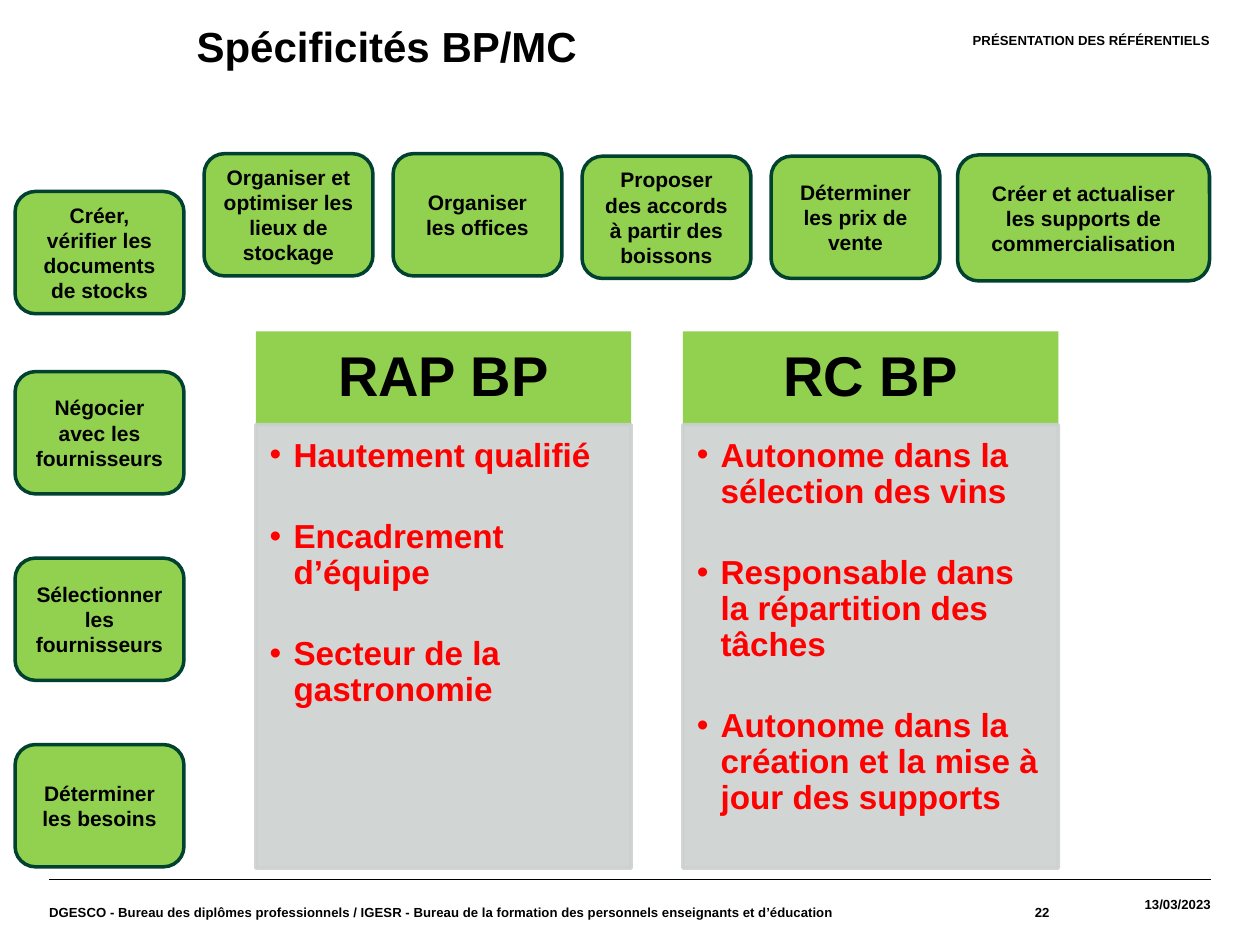
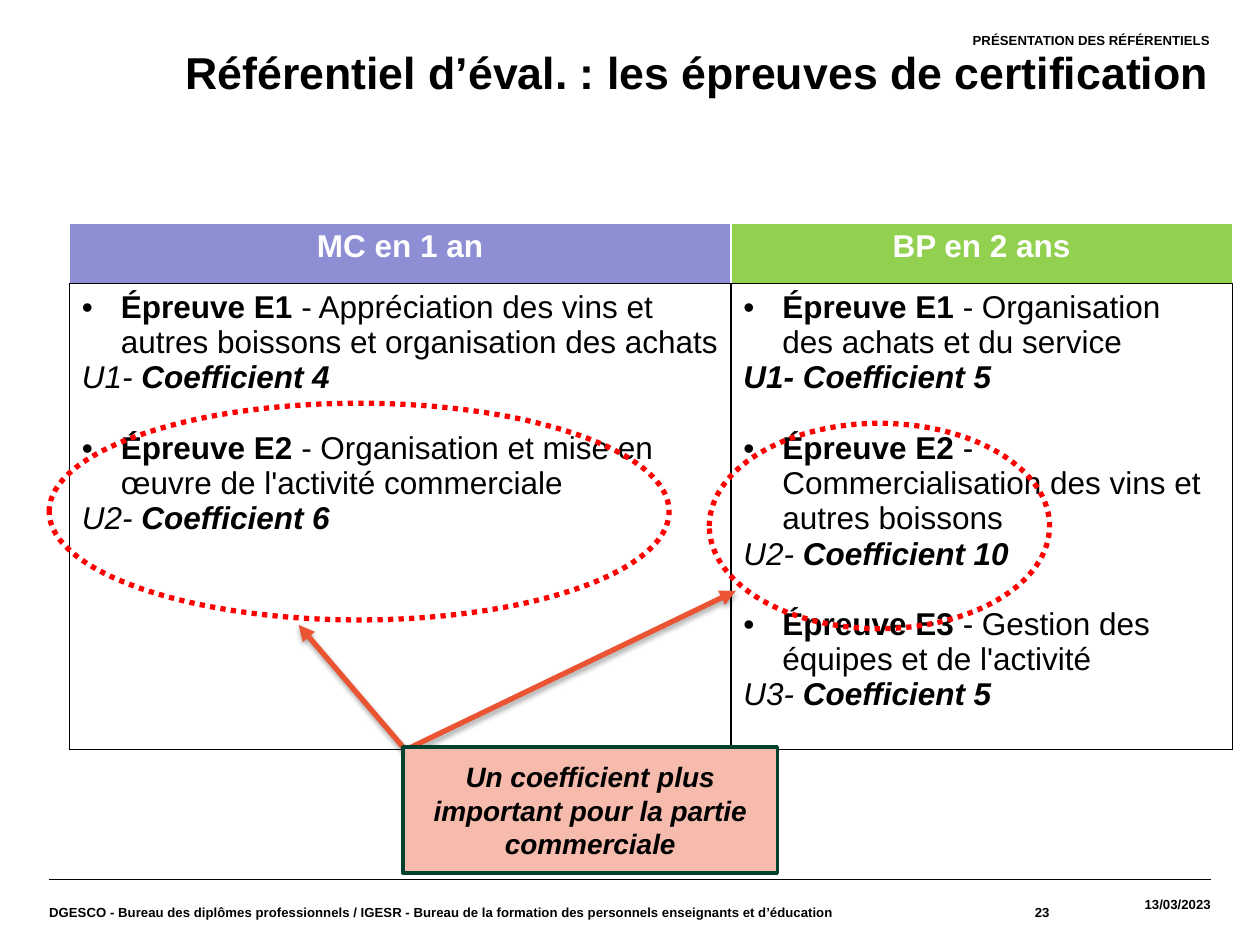
from typing import NamedTuple, Optional

from lxml.etree import SubElement
from pptx import Presentation
from pptx.dml.color import RGBColor
from pptx.enum.dml import MSO_LINE
from pptx.enum.shapes import MSO_CONNECTOR, MSO_SHAPE
from pptx.enum.text import MSO_ANCHOR, MSO_AUTO_SIZE, PP_ALIGN
from pptx.oxml.ns import qn
from pptx.util import Inches, Pt

FONT = "Arial"
BLACK, WHITE, RED = "000000", "FFFFFF", "FF0000"
GREEN, DARK_GREEN, LILAC = "92D050", "004130", "8E8ED5"
GREY, SALMON, ORANGE = "CCD1CF", "F7BBAD", "EA5433"
SECTION = "PRÉSENTATION DES RÉFÉRENTIELS"
DATE = "13/03/2023"
AUTHOR = (
    "DGESCO - Bureau des diplômes professionnels / IGESR - "
    "Bureau de la formation des personnels enseignants et d’éducation"
)
DEFAULT_INSETS = (0.1, 0.05, 0.1, 0.05)
NO_INSETS = (0, 0, 0, 0)


class Box(NamedTuple):
    left: float
    top: float
    width: float
    height: float

    def lengths(self):
        return [Inches(value) for value in self]


class Style(NamedTuple):
    size: float
    color: str = BLACK
    bold: bool = True
    italic: bool = False


class Panel(NamedTuple):
    heading: str
    points: list[str]


class Exam(NamedTuple):
    name: str
    subject: str
    unit: str
    coefficient: str
    italic_unit_only: bool = True


SMALL = Style(7.5)
SKILL_SIZE = (1.34, 0.97)
SIDE_SKILLS = [
    (1.52, "Créer, vérifier les documents de stocks"),
    (2.95, "Négocier avec les fournisseurs"),
    (4.43, "Sélectionner les fournisseurs"),
    (5.91, "Déterminer les besoins"),
]
TOP_SKILLS = [
    (1.22, "Organiser et optimiser les lieux de stockage"),
    (1.22, "Organiser les offices"),
    (1.24, "Proposer\ndes accords à partir des boissons"),
    (1.24, "Déterminer les prix de vente"),
]
PANELS = [
    Panel("RAP BP", ["Hautement qualifié", "Encadrement d’équipe",
                     "Secteur de la gastronomie"]),
    Panel("RC BP", ["Autonome dans la sélection des vins",
                    "Responsable dans la répartition des tâches",
                    "Autonome dans la création et la mise à jour des supports"]),
]
MC_EXAMS = [
    Exam("Épreuve E1 ",
         "- Appréciation des vins et autres boissons et organisation des achats",
         "U1- ", "Coefficient 4"),
    Exam("Épreuve E2 ", "- Organisation et mise en œuvre de l'activité commerciale",
         "U2- ", "Coefficient 6"),
]
BP_EXAMS = [
    Exam("Épreuve E1 ", "- Organisation des achats et du service",
         "U1- ", "Coefficient 5", italic_unit_only=False),
    Exam("Épreuve E2 ", "- Commercialisation des vins et autres boissons",
         "U2- ", "Coefficient 10"),
    Exam("Épreuve E3 ", "- Gestion des équipes et de l'activité",
         "U3- ", "Coefficient 5"),
]


def rgb(color: str) -> RGBColor:
    return RGBColor.from_string(color)


def add_run(paragraph, text: str, style: Style) -> None:
    """Add text in one style; a newline becomes a line break."""
    for index, line in enumerate(text.split("\n")):
        if index:
            paragraph.add_line_break()
        run = paragraph.add_run()
        run.text = line
        font = run.font
        font.name, font.size = FONT, Pt(style.size)
        font.bold, font.italic = style.bold, style.italic
        font.color.rgb = rgb(style.color)


def next_paragraph(frame, first: bool):
    return frame.paragraphs[0] if first else frame.add_paragraph()


def set_bullet(paragraph, indent: float, character: Optional[str] = "•") -> None:
    """Set a hanging bullet, or remove the inherited one when character is None."""
    properties = paragraph._p.get_or_add_pPr()
    properties.set("marL", str(Inches(indent)))
    properties.set("indent", str(-Inches(indent)))
    if character:
        SubElement(properties, qn("a:buFont"), typeface=FONT)
        SubElement(properties, qn("a:buChar"), char=character)
    else:
        SubElement(properties, qn("a:buNone"))


def prepare_frame(shape, anchor=MSO_ANCHOR.TOP, insets=DEFAULT_INSETS):
    frame = shape.text_frame
    frame.word_wrap, frame.auto_size = True, MSO_AUTO_SIZE.NONE
    frame.vertical_anchor = anchor
    frame.margin_left, frame.margin_top, frame.margin_right, frame.margin_bottom = (
        Inches(inset) for inset in insets)
    return frame


def write_line(shape, text: str, style: Style, align=PP_ALIGN.CENTER,
               anchor=MSO_ANCHOR.MIDDLE, insets=DEFAULT_INSETS):
    paragraph = prepare_frame(shape, anchor, insets).paragraphs[0]
    paragraph.alignment = align
    add_run(paragraph, text, style)
    return paragraph


def place(shape, box: Box) -> None:
    shape.left, shape.top, shape.width, shape.height = box.lengths()


def add_box(slide, preset, box: Box, fill: Optional[str] = None,
            line: Optional[str] = None, line_width: float = 2):
    shape = slide.shapes.add_shape(preset, *box.lengths())
    shape.shadow.inherit = False
    if fill:
        shape.fill.solid()
        shape.fill.fore_color.rgb = rgb(fill)
    else:
        shape.fill.background()
    if line:
        shape.line.color.rgb = rgb(line)
        shape.line.width = Pt(line_width)
    else:
        shape.line.fill.background()
    return shape


def add_line(slide, start: tuple, end: tuple, color: str, width: float):
    """Draw a straight line and return it with its empty effect list."""
    connector = slide.shapes.add_connector(
        MSO_CONNECTOR.STRAIGHT, *(Inches(value) for value in (*start, *end)))
    connector.line.color.rgb = rgb(color)
    connector.line.width = Pt(width)
    return connector, SubElement(connector.element.spPr, qn("a:effectLst"))


def add_arrow(slide, start: tuple, end: tuple) -> None:
    connector, effects = add_line(slide, start, end, ORANGE, 3)
    SubElement(connector.element.spPr.find(qn("a:ln")), qn("a:tailEnd"), type="triangle")
    shadow = SubElement(effects, qn("a:outerShdw"), blurRad=str(Pt(3.1)),
                        dist=str(Pt(1.8)), dir="5400000", rotWithShape="0")
    color = SubElement(shadow, qn("a:srgbClr"), val=BLACK)
    SubElement(color, qn("a:alpha"), val="35000")


def add_base_slide(presentation, number: int, title: str, title_box: Box, title_size: float):
    """Add a slide with its title, section label, rule and footers."""
    slide = presentation.slides.add_slide(presentation.slide_layouts[1])
    title_shape, section_shape = slide.shapes.title, slide.placeholders[1]
    place(title_shape, title_box)
    write_line(title_shape, title, Style(title_size), PP_ALIGN.LEFT, MSO_ANCHOR.TOP, NO_INSETS)
    place(section_shape, Box(3.62, 0.26, 5.98, 0.52))
    section = write_line(section_shape, SECTION, SMALL, PP_ALIGN.RIGHT,
                         MSO_ANCHOR.TOP, NO_INSETS)
    set_bullet(section, 0, None)
    section.space_before = Pt(0)
    add_line(slide, (0.39, 6.98), (9.61, 6.98), BLACK, 0.8)
    footers = [
        (AUTHOR, Box(0.39, 6.98, 6.46, 0.52), PP_ALIGN.LEFT),
        (str(number), Box(6.85, 6.98, 1.48, 0.52), PP_ALIGN.RIGHT),
        (DATE, Box(8.33, 6.98, 1.28, 0.4), PP_ALIGN.RIGHT),
    ]
    for text, box, align in footers:
        footer = slide.shapes.add_textbox(*box.lengths())
        write_line(footer, text, SMALL, align, insets=NO_INSETS)
    return slide


def add_skill(slide, box: Box, text: str) -> None:
    shape = add_box(slide, MSO_SHAPE.ROUNDED_RECTANGLE, box, GREEN, DARK_GREEN)
    write_line(shape, text, Style(12))


def add_panel(slide, left: float, panel: Panel) -> None:
    heading = add_box(slide, MSO_SHAPE.RECTANGLE, Box(left, 2.63, 2.98, 0.75), GREEN)
    write_line(heading, panel.heading, Style(32)).line_spacing = 0.9
    body = add_box(slide, MSO_SHAPE.RECTANGLE, Box(left, 3.37, 2.98, 3.52), GREY, GREY)
    for color in body.element.spPr.iter(qn("a:srgbClr")):
        SubElement(color, qn("a:alpha"), val="90000")
    frame = prepare_frame(body, insets=(0.11, 0.11, 0.15, 0.17))
    for index, point in enumerate(panel.points):
        paragraph = next_paragraph(frame, index == 0)
        set_bullet(paragraph, 0.19)
        paragraph.alignment = PP_ALIGN.LEFT
        paragraph.line_spacing = 0.9
        if index:
            paragraph.space_before = Pt(26)
        add_run(paragraph, point, Style(19, RED))


def format_cell(cell, fill: str, borders: dict[str, str]) -> None:
    """Set the fill and the one-point borders, keyed by side (L, R, T, B)."""
    properties = cell._tc.get_or_add_tcPr()
    for side, color in borders.items():
        line = SubElement(properties, qn(f"a:ln{side}"), w=str(Pt(1)))
        SubElement(SubElement(line, qn("a:solidFill")), qn("a:srgbClr"), val=color)
    cell.fill.solid()
    cell.fill.fore_color.rgb = rgb(fill)


def write_exams(frame, exams: list[Exam]) -> None:
    plain, strong = Style(18, bold=False), Style(18)
    for index, exam in enumerate(exams):
        heading = next_paragraph(frame, index == 0)
        set_bullet(heading, 0.31)
        if index:
            heading.space_before = Pt(20)
        add_run(heading, exam.name, strong)
        add_run(heading, exam.subject, plain)
        weight = frame.add_paragraph()
        add_run(weight, exam.unit, Style(18, bold=not exam.italic_unit_only, italic=True))
        add_run(weight, exam.coefficient, Style(18, italic=True))


def add_exam_table(slide) -> None:
    table = slide.shapes.add_table(2, 2, *Box(0.55, 1.77, 9.23, 4.18).lengths()).table
    for row, height in zip(table.rows, (0.48, 3.7)):
        row.height = Inches(height)
    columns = [(5.25, "MC en 1 an", LILAC, MC_EXAMS), (3.98, "BP en 2 ans", GREEN, BP_EXAMS)]
    for index, (width, heading, fill, exams) in enumerate(columns):
        table.columns[index].width = Inches(width)
        top, bottom = table.cell(0, index), table.cell(1, index)
        format_cell(top, fill, {"L": WHITE, "R": WHITE, "T": WHITE, "B": BLACK})
        format_cell(bottom, WHITE, dict.fromkeys("LRTB", BLACK))
        paragraph = top.text_frame.paragraphs[0]
        paragraph.alignment = PP_ALIGN.CENTER
        add_run(paragraph, heading, Style(18, WHITE))
        write_exams(bottom.text_frame, exams)


def build_skills_slide(presentation) -> None:
    slide = add_base_slide(presentation, 22, "Spécificités BP/MC",
                           Box(1.56, 0.16, 8.2, 0.42), 24)
    for index, panel in enumerate(PANELS):
        add_panel(slide, 2.03 + 3.39 * index, panel)
    for top, text in SIDE_SKILLS:
        add_skill(slide, Box(0.12, top, *SKILL_SIZE), text)
    for index, (top, text) in enumerate(TOP_SKILLS):
        add_skill(slide, Box(1.62 + 1.5 * index, top, *SKILL_SIZE), text)
    add_skill(slide, Box(7.6, 1.23, 2, 1), "Créer et actualiser les supports de commercialisation")


def build_exams_slide(presentation) -> None:
    slide = add_base_slide(presentation, 23,
                           "Référentiel d’éval. : les épreuves de certification",
                           Box(1.47, 0.36, 8.3, 0.44), 25.5)
    add_exam_table(slide)
    add_arrow(slide, (3.2, 5.96), (5.84, 4.69))
    add_arrow(slide, (3.2, 5.93), (2.37, 4.96))
    remark = add_box(slide, MSO_SHAPE.RECTANGLE, Box(3.2, 5.93, 2.97, 1), SALMON, DARK_GREEN)
    write_line(remark, "Un coefficient plus important pour la partie commerciale",
               Style(16, italic=True))
    for box in (Box(0.39, 3.2, 4.92, 1.72), Box(5.63, 3.36, 2.7, 1.63)):
        ellipse = add_box(slide, MSO_SHAPE.OVAL, box, line=RED, line_width=3)
        ellipse.line.dash_style = MSO_LINE.ROUND_DOT


def main() -> None:
    presentation = Presentation()
    presentation.slide_width, presentation.slide_height = Inches(10), Inches(7.5)
    build_skills_slide(presentation)
    build_exams_slide(presentation)
    presentation.save("out.pptx")


if __name__ == "__main__":
    main()
